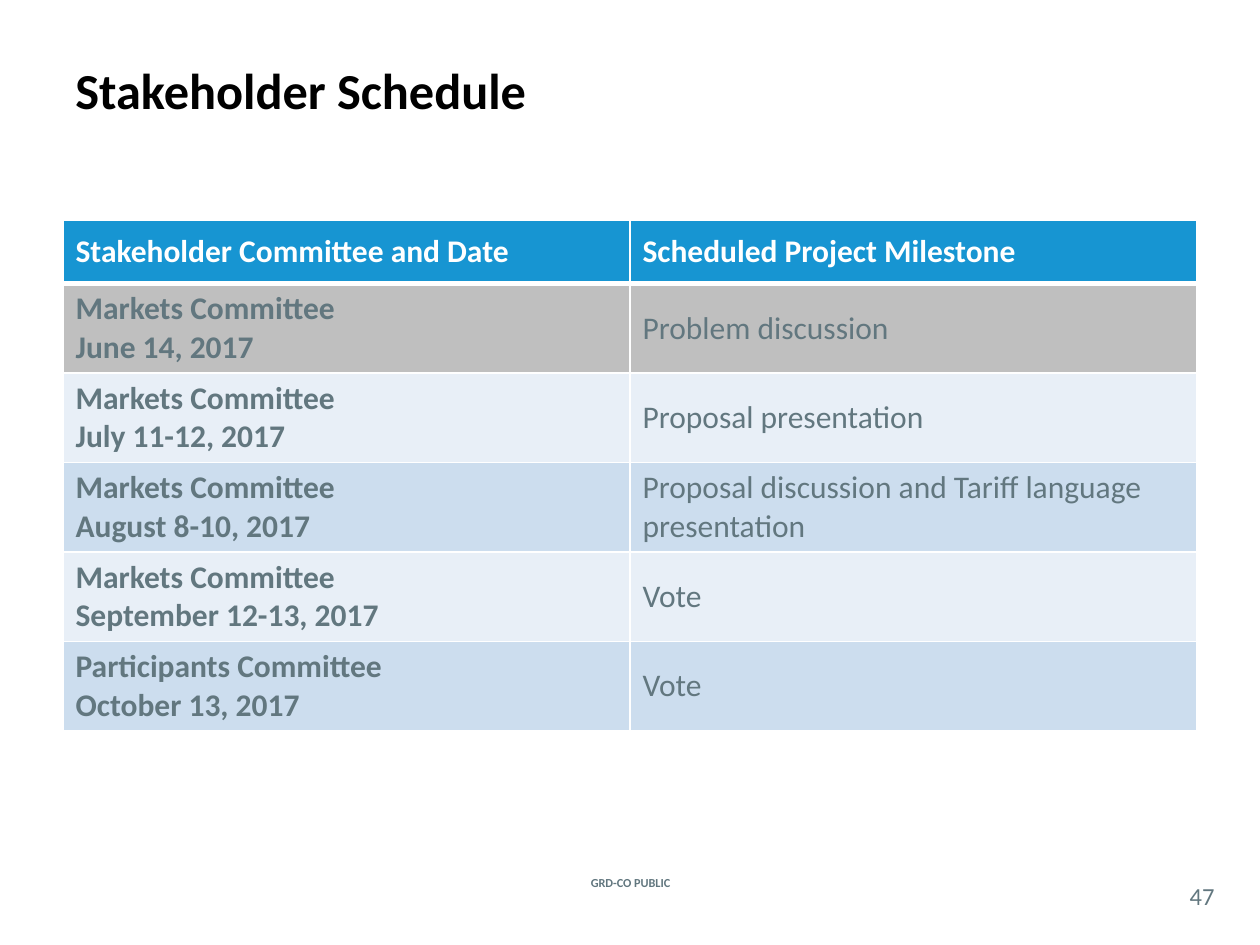
"""Build the stakeholder schedule slide."""
from dataclasses import dataclass

from lxml import etree
from pptx import Presentation
from pptx.dml.color import RGBColor
from pptx.enum.text import MSO_ANCHOR, PP_ALIGN
from pptx.oxml.ns import qn
from pptx.slide import Slide
from pptx.table import _Cell
from pptx.text.text import TextFrame
from pptx.util import Inches, Pt

TOP, MIDDLE = MSO_ANCHOR.TOP, MSO_ANCHOR.MIDDLE
LEFT, CENTER = PP_ALIGN.LEFT, PP_ALIGN.CENTER
FONT = "Calibri"
BLACK, WHITE, SLATE = "000000", "FFFFFF", "62777F"
BLUE, GRAY, PALE, LIGHT = "1795D2", "BFBFBF", "E8EFF7", "CCDDEE"
HEAD_HIGH, ROW_HIGH = 0.5, 0.71


@dataclass
class Label:
    text: str
    left: float
    top: float
    width: float
    height: float
    size: float
    color: str = SLATE
    bold: bool = False
    align: PP_ALIGN = CENTER
    inset: float = 0


@dataclass
class Row:
    date: str
    goal: str
    fill: str


LABELS = [
    Label("GRD-CO PUBLIC", 4.27, 6.92, 1.47, 0.17, 7, bold=True),
    Label("Stakeholder Schedule", 0.5, 0.42, 9, 0.58, 28.8, BLACK, True, LEFT, 0.1),
    Label("47", 9.33, 6.96, 0.42, 0.29, 14),
]
ROWS = [
    Row("Stakeholder Committee and Date", "Scheduled Project Milestone", BLUE),
    Row("Markets Committee\vJune 14, 2017", "Problem discussion", GRAY),
    Row("Markets Committee\vJuly 11-12, 2017", "Proposal presentation", PALE),
    Row("Markets Committee\vAugust 8-10, 2017",
        "Proposal discussion and Tariff language presentation", LIGHT),
    Row("Markets Committee\nSeptember 12-13, 2017", "Vote", PALE),
    Row("Participants Committee\nOctober 13, 2017", "Vote", LIGHT),
]


def rgb(code: str) -> RGBColor:
    """Turn a hex string into a colour."""
    return RGBColor.from_string(code)


def write(frame: TextFrame, text: str, size: float, color: str,
          bold: bool, align: PP_ALIGN = LEFT) -> None:
    """Set the text of a frame and format its runs."""
    frame.text = text
    frame.word_wrap = True
    for line in frame.paragraphs:
        line.alignment = align
        for run in line.runs:
            run.font.name, run.font.size = FONT, Pt(size)
            run.font.bold, run.font.color.rgb = bold, rgb(color)


def add_label(slide: Slide, item: Label) -> None:
    """Add one text box."""
    box = slide.shapes.add_textbox(Inches(item.left), Inches(item.top),
                                   Inches(item.width), Inches(item.height))
    frame = box.text_frame
    frame.margin_left = frame.margin_right = Inches(item.inset)
    frame.margin_top = frame.margin_bottom = 0
    frame.vertical_anchor = MIDDLE
    write(frame, item.text, item.size, item.color, item.bold, item.align)


def add_edges(cell: _Cell, top: float, base: float) -> None:
    """Draw the white borders of a cell."""
    props = cell._tc.get_or_add_tcPr()
    for side, width in zip("LRTB", (1, 1, top, base)):
        line = etree.SubElement(props, qn(f"a:ln{side}"), w=str(Pt(width)))
        fill = etree.SubElement(line, qn("a:solidFill"))
        etree.SubElement(fill, qn("a:srgbClr"), val=WHITE)


def add_grid(slide: Slide, rows: list[Row]) -> None:
    """Add the schedule table."""
    high = HEAD_HIGH + ROW_HIGH * (len(rows) - 1)
    grid = slide.shapes.add_table(len(rows), 2, Inches(0.5), Inches(1.75),
                                  Inches(9), Inches(high)).table
    for i, row in enumerate(rows):
        head = i == 0
        grid.rows[i].height = Inches(HEAD_HIGH if head else ROW_HIGH)
        for j, text in enumerate((row.date, row.goal)):
            cell = grid.cell(i, j)
            add_edges(cell, 3 if i == 1 else 1, 3 if head else 1)
            cell.fill.solid()
            cell.fill.fore_color.rgb = rgb(row.fill)
            cell.vertical_anchor = MIDDLE if head or j else TOP
            write(cell.text_frame, text, 18, WHITE if head else SLATE, head or j == 0)


def main() -> None:
    """Build and save the deck."""
    deck = Presentation()
    deck.slide_width, deck.slide_height = Inches(10), Inches(7.5)
    slide = deck.slides.add_slide(deck.slide_layouts[6])
    for item in LABELS:
        add_label(slide, item)
    add_grid(slide, ROWS)
    deck.save("out.pptx")


if __name__ == "__main__":
    main()
